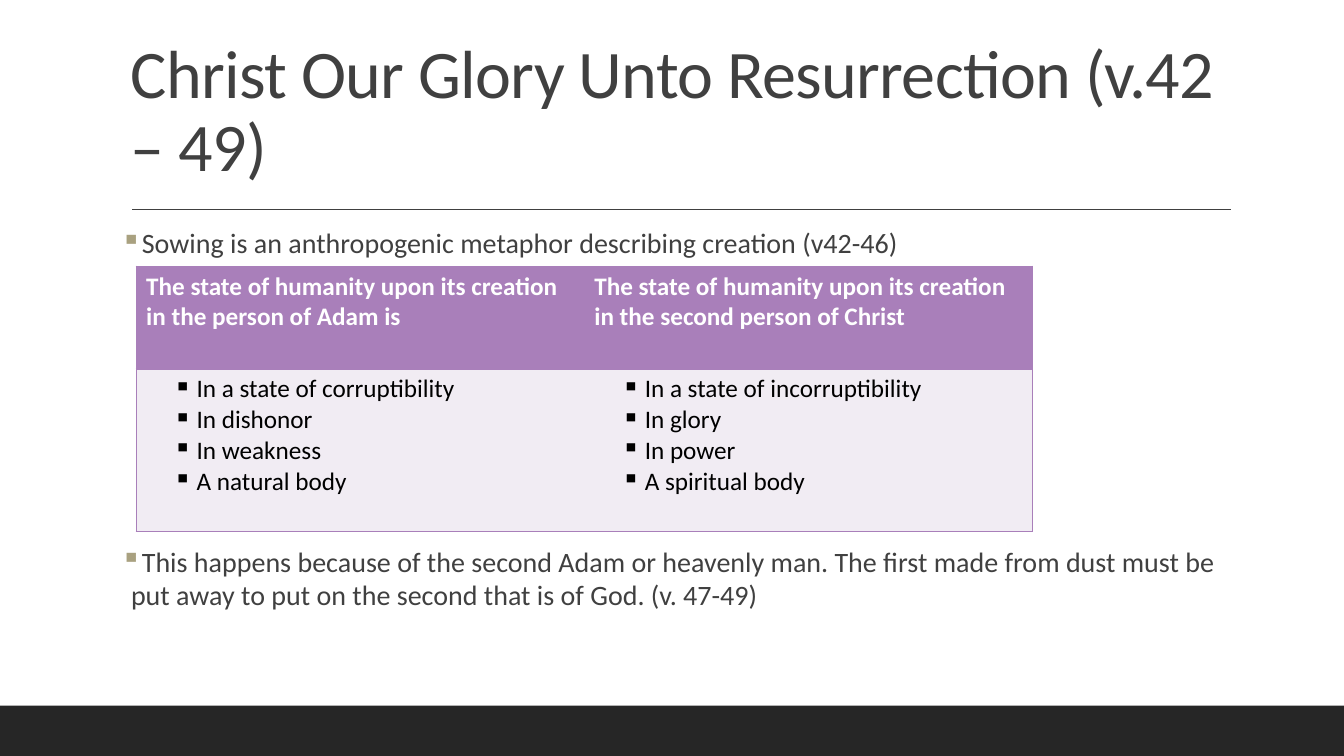
from lxml import etree
from pptx import Presentation
from pptx.dml.color import RGBColor
from pptx.enum.shapes import MSO_CONNECTOR, MSO_SHAPE
from pptx.enum.text import MSO_ANCHOR, PP_ALIGN
from pptx.oxml.ns import qn
from pptx.util import Inches, Pt

LINE = MSO_CONNECTOR.STRAIGHT
RECT = MSO_SHAPE.RECTANGLE
TOP, BOTTOM = MSO_ANCHOR.TOP, MSO_ANCHOR.BOTTOM
LEFT = PP_ALIGN.LEFT

DARK, GREY, PURPLE, LILAC = "262626", "404040", "A97FBA", "F1ECF3"
TAN, WHITE, BLACK = "A9A180", "FFFFFF", "000000"

TITLE = "Christ Our Glory Unto Resurrection (v.42 – 49)"
SOWING = "Sowing is an anthropogenic metaphor describing creation (v42-46)"
SECOND_ADAM = (
    "This happens because of the second Adam or heavenly man. The first made from dust "
    "must be put away to put on the second that is of God. (v. 47-49)"
)
STATES = [
    ("The state of humanity upon its creation in the person of Adam is",
     ["In a state of corruptibility", "In dishonor", "In weakness", "A natural body"]),
    ("The state of humanity upon its creation in the second person of Christ",
     ["In a state of incorruptibility", "In glory", "In power", "A spiritual body"]),
]


def rgb(value):
    return RGBColor.from_string(value)


class Deck:
    font = "Calibri"

    def __init__(self, prs):
        self.s = prs.slides.add_slide(prs.slide_layouts[6])

    def bar(self, x, y, w, h, color):
        sp = self.s.shapes.add_shape(RECT, Inches(x), Inches(y), Inches(w), Inches(h))
        sp.shadow.inherit = False
        sp.fill.solid()
        sp.fill.fore_color.rgb = rgb(color)
        sp.line.fill.background()

    def rule(self, x1, x2, y, color):
        cn = self.s.shapes.add_connector(LINE, Inches(x1), Inches(y), Inches(x2), Inches(y))
        cn.line.color.rgb = rgb(color)
        cn.line.width = Pt(1)
        etree.SubElement(cn._element.spPr, qn("a:effectLst"))

    def box(self, x, y, w, h, anchor=TOP, side=0.1):
        tf = self.s.shapes.add_textbox(Inches(x), Inches(y), Inches(w), Inches(h)).text_frame
        tf.word_wrap = True
        tf.vertical_anchor = anchor
        tf.margin_left = tf.margin_right = Inches(side)
        return tf

    def paragraphs(self, tf, texts, size, color, bold=False):
        for i, text in enumerate(texts):
            p = tf.paragraphs[0] if i == 0 else tf.add_paragraph()
            p.text = text
            p.alignment = LEFT
            p.font.name = self.font
            p.font.size = Pt(size)
            p.font.bold = bold
            p.font.color.rgb = rgb(color)
        return tf.paragraphs

    def bullet(self, p, margin, hang, color):
        pPr = p._p.get_or_add_pPr()
        pPr.set("marL", str(Inches(margin)))
        pPr.set("indent", str(-Inches(hang)))
        clr = etree.Element(qn("a:buClr"))
        etree.SubElement(clr, qn("a:srgbClr"), val=color)
        char = etree.Element(qn("a:buChar"), char="▪")
        defaults = pPr.find(qn("a:defRPr"))
        defaults.addprevious(clr)
        defaults.addprevious(char)

    def borders(self, cell, edges, color):
        tcPr = cell._tc.get_or_add_tcPr()
        for i, edge in enumerate("LRTB"):
            ln = etree.Element(qn("a:ln" + edge), w=str(Pt(1)))
            if edge in edges:
                fill = etree.SubElement(ln, qn("a:solidFill"))
                etree.SubElement(fill, qn("a:srgbClr"), val=color)
            else:
                etree.SubElement(ln, qn("a:noFill"))
            tcPr.insert(i, ln)

    def table(self, x, y, w, row_heights, columns):
        table = self.s.shapes.add_table(
            len(row_heights), len(columns), Inches(x), Inches(y),
            Inches(w), Inches(sum(row_heights))).table
        table.horz_banding = False
        for row, height in zip(table.rows, row_heights):
            row.height = Inches(height)
        for col, (heading, points) in enumerate(columns):
            head, body = table.cell(0, col), table.cell(1, col)
            side = "L" if col == 0 else "R"
            for cell, fill in ((head, PURPLE), (body, LILAC)):
                cell.fill.solid()
                cell.fill.fore_color.rgb = rgb(fill)
                self.borders(cell, "TB" + side, PURPLE)
            self.paragraphs(head.text_frame, [heading], 18, WHITE, bold=True)
            for p in self.paragraphs(body.text_frame, points, 18, BLACK):
                self.bullet(p, 0.5, 0.23, BLACK)


def main():
    prs = Presentation()
    prs.slide_width, prs.slide_height = Inches(13.33), Inches(7.5)
    deck = Deck(prs)
    deck.bar(0, 7, 13.33, 0.5, DARK)
    deck.rule(1.31, 12.21, 2.08, GREY)

    title = deck.paragraphs(deck.box(1.2, 0.31, 11, 1.59, BOTTOM), [TITLE], 48.6, GREY)[0]
    title.line_spacing = 0.9
    title.font._element.set("spc", "-50")

    body = deck.paragraphs(deck.box(1.2, 2.19, 11, 4.11, side=0), [SOWING, SECOND_ADAM], 20, GREY)
    for p, before in zip(body, (0, 201.5)):
        p.space_before, p.space_after = Pt(before), Pt(2)
        deck.bullet(p, 0.1, 0.1, TAN)

    deck.table(1.35, 2.64, 8.89, [1.02, 1.61], STATES)
    prs.save("out.pptx")


if __name__ == "__main__":
    main()
